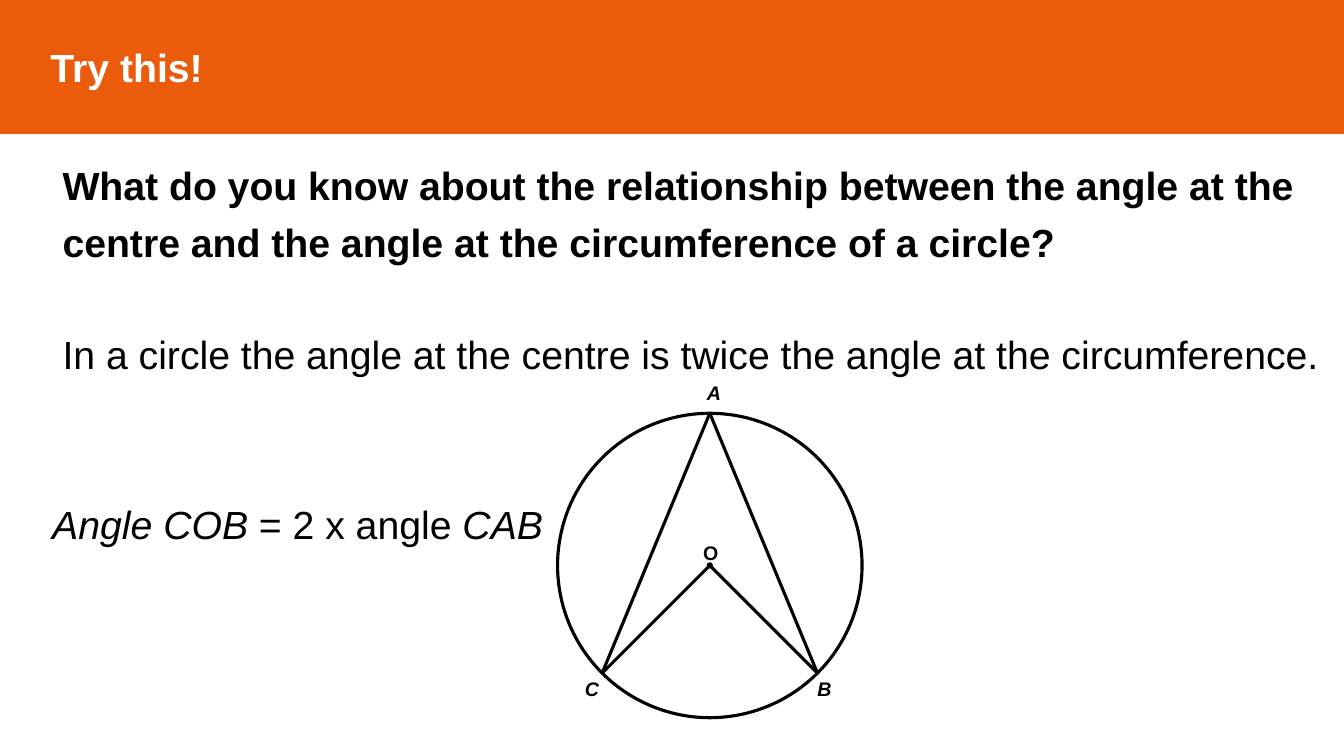
from math import cos, radians, sin

from lxml import etree
from pptx import Presentation
from pptx.dml.color import RGBColor
from pptx.enum import shapes, text
from pptx.oxml.ns import qn
from pptx.util import Inches, Pt

# Content
TITLE = "Try this!"
QUESTION = ("What do you know about the relationship between the angle at the "
            "centre and the angle at the circumference of a circle?")
THEOREM = ("In a circle the angle at the centre is twice the angle at the "
           "circumference.")
EQUATION = [("Angle COB", True), (" = 2 x angle ", False), ("CAB", True)]

# Points: direction from the centre in degrees, distance in radii
POINTS = {"A": (90, 1), "B": (-45, 1), "C": (225, 1), "O": (0, 0)}
CHORDS = ["OC", "OB", "AC", "AB"]
# Offset of each letter from its point, in inches
LABELS = {"A": (0.04, -0.2), "B": (0.07, 0.15),
          "C": (-0.1, 0.15), "O": (0.01, -0.13)}

# Layout, in inches
WIDTH, HEIGHT = 13.33, 7.5
BANNER_H = 1.32
CENTRE_X, CENTRE_Y, RADIUS = 7.04, 5.61, 1.51
DOT_RADIUS = 0.015
LABEL_W, LABEL_H = 0.28, 0.34

ORANGE = RGBColor(0xEA, 0x5B, 0x0C)
WHITE = RGBColor(0xFF, 0xFF, 0xFF)
BLACK = RGBColor(0, 0, 0)


def style(r, size=28, color=BLACK, bold=False, italic=False):
    r.font.name = "Arial"
    r.font.size = Pt(size)
    r.font.color.rgb = color
    r.font.bold = bold
    r.font.italic = italic


def place(sp, left, top, width, height):
    sp.left, sp.top = Inches(left), Inches(top)
    sp.width, sp.height = Inches(width), Inches(height)


def locate(name):
    angle, distance = POINTS[name]
    reach = RADIUS * distance
    return (CENTRE_X + reach * cos(radians(angle)),
            CENTRE_Y - reach * sin(radians(angle)))


def add_circle(radius):
    sp = slide.shapes.add_shape(
        shapes.MSO_SHAPE.OVAL, Inches(CENTRE_X - radius),
        Inches(CENTRE_Y - radius), Inches(2 * radius), Inches(2 * radius))
    sp.shadow.inherit = False
    sp.line.color.rgb = BLACK
    sp.line.width = Pt(2.25)
    return sp


prs = Presentation()
prs.slide_width, prs.slide_height = Inches(WIDTH), Inches(HEIGHT)
slide = prs.slides.add_slide(prs.slide_layouts[1])
title, body = slide.placeholders

# Title banner
place(title, 0, 0, WIDTH, BANNER_H)
title.fill.solid()
title.fill.fore_color.rgb = ORANGE
title.line.color.rgb = ORANGE
title.line.width = Pt(1)
tf = title.text_frame
tf.text = TITLE
tf.margin_left = Inches(0.5)
tf.vertical_anchor = text.MSO_ANCHOR.MIDDLE
tf.paragraphs[0].alignment = text.PP_ALIGN.LEFT
style(tf.paragraphs[0].runs[0], color=WHITE, bold=True)

# Question and theorem
place(body, 0.52, 1.46, WIDTH - 0.52, 2.31)
tf = body.text_frame
tf.text = f"{QUESTION}\n{THEOREM}"
tf.auto_size = text.MSO_AUTO_SIZE.NONE
for p, bold, gap in zip(tf.paragraphs, (True, False), (0, 40)):
    p.line_spacing = 1.2
    p.space_before = Pt(gap)
    style(p.runs[0], bold=bold)
    pPr = p._p.get_or_add_pPr()
    pPr.set("marL", "0")
    pPr.set("indent", "0")
    etree.SubElement(pPr, qn("a:buNone"))

# Equation
box = slide.shapes.add_textbox(Inches(0.42), Inches(4.91), Inches(5.13), Inches(0.57))
box.text_frame.word_wrap = False
p = box.text_frame.paragraphs[0]
for words, italic in EQUATION:
    r = p.add_run()
    r.text = words
    style(r, italic=italic)

# Circle and its centre
add_circle(RADIUS).fill.background()
dot = add_circle(DOT_RADIUS)
dot.fill.solid()
dot.fill.fore_color.rgb = BLACK

# Chords and radii
for start, end in CHORDS:
    ends = [Inches(v) for v in locate(start) + locate(end)]
    line = slide.shapes.add_connector(shapes.MSO_CONNECTOR.STRAIGHT, *ends)
    line.line.color.rgb = BLACK
    line.line.width = Pt(2.25)
    etree.SubElement(line._element.spPr, qn("a:effectLst"))

# Point letters
for name, (dx, dy) in LABELS.items():
    x, y = locate(name)
    box = slide.shapes.add_textbox(
        Inches(x + dx - LABEL_W / 2), Inches(y + dy - LABEL_H / 2),
        Inches(LABEL_W), Inches(LABEL_H))
    tf = box.text_frame
    tf.text = name
    tf.word_wrap = True
    tf.margin_left = tf.margin_right = 0
    tf.vertical_anchor = text.MSO_ANCHOR.MIDDLE
    tf.paragraphs[0].alignment = text.PP_ALIGN.CENTER
    style(tf.paragraphs[0].runs[0], size=14, bold=True, italic=name != "O")

prs.save("out.pptx")
